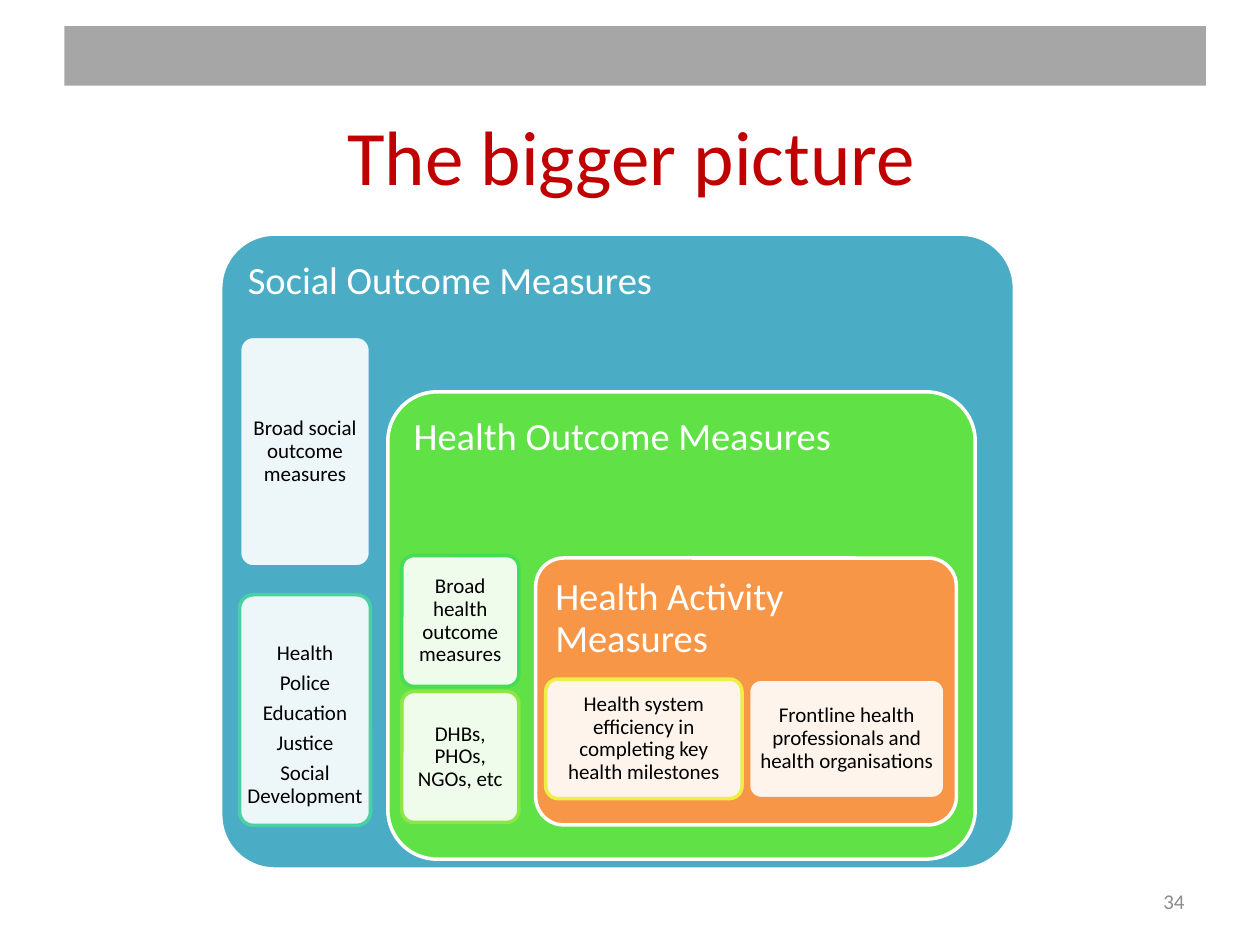
from dataclasses import dataclass

from lxml.etree import SubElement
from pptx import Presentation
from pptx.dml.color import RGBColor
from pptx.enum.shapes import MSO_SHAPE
from pptx.enum.text import MSO_ANCHOR, PP_ALIGN
from pptx.oxml.ns import qn
from pptx.util import Cm, Pt


@dataclass(frozen=True)
class Theme:
    font: str = "Calibri"
    title: str = "C00000"
    banner: str = "A6A6A6"
    white: str = "FFFFFF"
    black: str = "000000"
    number: str = "8C8C8C"
    social: str = "4BACC6"
    health: str = "60E146"
    activity: str = "F79646"
    title_size: int = 44
    frame_size: int = 22
    card_size: int = 12


theme = Theme()


def write(shape, lines, size, color, align, spaced=True):
    """Fill a shape with one paragraph per line."""
    frame = shape.text_frame
    frame.word_wrap = True
    frame.text = "\n".join(lines)
    for paragraph in frame.paragraphs:
        paragraph.alignment = align
        paragraph.font.name = theme.font
        paragraph.font.size = Pt(size)
        paragraph.font.color.rgb = RGBColor.from_string(color)
        if spaced:
            paragraph.line_spacing = 0.9
            paragraph.space_after = Pt(0.35 * size)


def add_panel(box, corner, fill, outline, inset):
    """Add a rounded panel with equal text insets."""
    shape = slide.shapes.add_shape(MSO_SHAPE.ROUNDED_RECTANGLE, *map(Cm, box))
    shape.shadow.inherit = False
    shape.adjustments[0] = corner
    shape.fill.solid()
    shape.fill.fore_color.rgb = RGBColor.from_string(fill)
    shape.line.color.rgb = RGBColor.from_string(outline)
    shape.line.width = Pt(2)
    frame = shape.text_frame
    frame.margin_left = frame.margin_right = Cm(inset)
    frame.margin_top = frame.margin_bottom = Cm(inset)
    return shape


presentation = Presentation()
presentation.slide_width, presentation.slide_height = Cm(25.4), Cm(19.05)
slide = presentation.slides.add_slide(presentation.slide_layouts[5])

# Title
title = slide.shapes.title
title.left, title.top, title.width, title.height = Cm(1.3), Cm(1.52), Cm(22.86), Cm(3.18)
write(title, ["The bigger picture"], theme.title_size, theme.title, PP_ALIGN.CENTER, spaced=False)
title.text_frame.vertical_anchor = MSO_ANCHOR.MIDDLE

# Banner
banner = slide.shapes.add_shape(MSO_SHAPE.RECTANGLE, Cm(1.3), Cm(0.53), Cm(23.01), Cm(1.2))
banner.shadow.inherit = False
banner.fill.solid()
banner.fill.fore_color.rgb = RGBColor.from_string(theme.banner)
banner.line.fill.background()

# Nested frames, outermost first: heading, box (left, top, width, height), corner, fill
frames = [
    ("Social Outcome Measures", (4.45, 4.72, 16, 12.8), 0.085, theme.social),
    ("Health Outcome Measures", (7.82, 7.9, 11.84, 9.42), 0.105, theme.health),
    ("Health Activity Measures", (10.8, 11.25, 8.48, 5.38), 0.105, theme.activity),
]
for heading, box, corner, fill in frames:
    panel = add_panel(box, corner, fill, theme.white, inset=0.23)
    write(panel, [heading], theme.frame_size, theme.white, PP_ALIGN.LEFT)
    panel.text_frame.vertical_anchor = MSO_ANCHOR.TOP

# Cards: a pair of equal size in each frame, as lines, (left, top), (width, height), outline
social_size, health_size, activity_size = (2.64, 4.65), (2.36, 2.64), (3.96, 2.41)
sectors = ["Health", "Police", "Education", "Justice", "Social Development"]
cards = [
    (["Broad social outcome measures"], (4.83, 6.78), social_size, theme.social),
    (sectors, (4.83, 11.99), social_size, "49D1A3"),
    (["Broad health outcome measures"], (8.1, 11.2), health_size, "47DC57"),
    (["DHBs, PHOs, NGOs, etc"], (8.1, 13.94), health_size, "8DE646"),
    (["Health system efficiency in completing key health milestones"],
     (11, 13.69), activity_size, "EEEF46"),
    (["Frontline health professionals and health organisations"],
     (15.09, 13.69), activity_size, theme.activity),
]
for lines, position, size, outline in cards:
    card = add_panel(position + size, 0.105, theme.white, outline, inset=0.1)
    write(card, lines, theme.card_size, theme.black, PP_ALIGN.CENTER)
    card.text_frame.vertical_anchor = MSO_ANCHOR.MIDDLE
    # 90 % opaque white
    color = card.fill._xPr.find(qn("a:solidFill"))[0]
    SubElement(color, qn("a:alpha"), val="90000")
    if lines is sectors:
        # The list sits low in its card
        card.text_frame.margin_top = Cm(0.7)
        card.text_frame.margin_left = card.text_frame.margin_right = Cm(0.06)

# Slide number
number = slide.shapes.add_textbox(Cm(18.2), Cm(17.66), Cm(5.93), Cm(1.01))
write(number, ["34"], theme.card_size, theme.number, PP_ALIGN.RIGHT, spaced=False)
number.text_frame.vertical_anchor = MSO_ANCHOR.MIDDLE

presentation.save("out.pptx")
